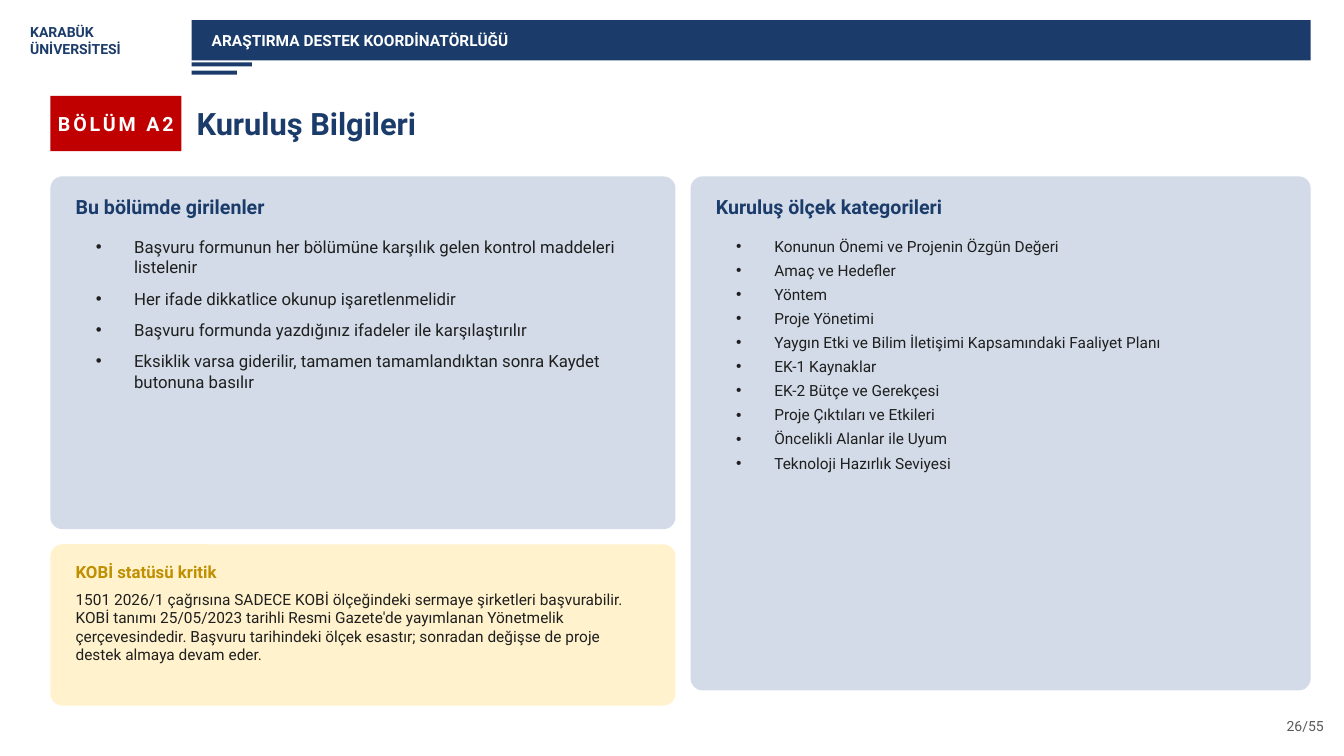
import pptx
import pptx.util
import pptx.dml.color
import pptx.enum.shapes
import pptx.enum.text
import lxml.etree

NAVY, RED, PALE, CREAM = "1B3C6B", "C00000", "D2DBE7", "FFF2CC"
GOLD, INK, GRAY, WHITE = "BF8F00", "1F1F1F", "595959", "FFFFFF"
FONT = "Roboto"

SCHOOL = ["KARABÜK", "ÜNİVERSİTESİ"]
UNIT = "ARAŞTIRMA DESTEK KOORDİNATÖRLÜĞÜ"
BADGE = "BÖLÜM A2"
TITLE = "Kuruluş Bilgileri"
PAGE = "26/55"
CARDS = [
    dict(box=(50, 175, 620, 350), head="Bu bölümde girilenler", size=12, gap=8, items=[
        "Başvuru formunun her bölümüne karşılık gelen kontrol maddeleri listelenir",
        "Her ifade dikkatlice okunup işaretlenmelidir",
        "Başvuru formunda yazdığınız ifadeler ile karşılaştırılır",
        "Eksiklik varsa giderilir, tamamen tamamlandıktan sonra Kaydet butonuna basılır",
    ]),
    dict(box=(685, 175, 615, 510), head="Kuruluş ölçek kategorileri", size=11, gap=4, items=[
        "Konunun Önemi ve Projenin Özgün Değeri",
        "Amaç ve Hedefler",
        "Yöntem",
        "Proje Yönetimi",
        "Yaygın Etki ve Bilim İletişimi Kapsamındaki Faaliyet Planı",
        "EK-1 Kaynaklar",
        "EK-2 Bütçe ve Gerekçesi",
        "Proje Çıktıları ve Etkileri",
        "Öncelikli Alanlar ile Uyum",
        "Teknoloji Hazırlık Seviyesi",
    ]),
]
NOTE = dict(
    box=(50, 540, 620, 160), head="KOBİ statüsü kritik",
    text="1501 2026/1 çağrısına SADECE KOBİ ölçeğindeki sermaye şirketleri başvurabilir. "
         "KOBİ tanımı 25/05/2023 tarihli Resmi Gazete'de yayımlanan Yönetmelik çerçevesindedir. "
         "Başvuru tarihindeki ölçek esastır; sonradan değişse de proje destek almaya devam eder.")

KIND = pptx.enum.shapes.MSO_SHAPE
ALIGN = pptx.enum.text.PP_ALIGN
MID = pptx.enum.text.MSO_ANCHOR.MIDDLE
TOP = pptx.enum.text.MSO_ANCHOR.TOP


def px(n):
    return pptx.util.Emu(n * 9144)


def paint(hue):
    return pptx.dml.color.RGBColor.from_string(hue)


def block(box, hue, radius=0):
    kind = KIND.ROUNDED_RECTANGLE if radius else KIND.RECTANGLE
    shape = slide.shapes.add_shape(kind, *map(px, box))
    if radius:
        shape.adjustments[0] = radius / min(box[2:])
    shape.shadow.inherit = False
    shape.fill.solid()
    shape.fill.fore_color.rgb = paint(hue)
    shape.line.fill.background()
    return shape


def write(shape, lines, size, hue, bold=False, align=ALIGN.LEFT, anchor=MID, pad=(0, 0, 0, 0)):
    frame = shape.text_frame
    frame.text = "\n".join(lines)
    frame.word_wrap = True
    frame.auto_size = pptx.enum.text.MSO_AUTO_SIZE.NONE
    frame.vertical_anchor = anchor
    frame.margin_left, frame.margin_top, frame.margin_right, frame.margin_bottom = map(px, pad)
    for para in frame.paragraphs:
        para.alignment = align
        para.space_before = pptx.util.Pt(0)
        for run in para.runs:
            run.font.name = FONT
            run.font.size = pptx.util.Pt(size)
            run.font.bold = bold
            run.font.color.rgb = paint(hue)
    return frame


def label(box, lines, size, hue, **style):
    return write(slide.shapes.add_textbox(*map(px, box)), lines, size, hue, **style)


def place(shape, box):
    shape.left, shape.top, shape.width, shape.height = map(px, box)
    slide.shapes._spTree.append(shape._element)


def bullet(para):
    props = para._p.get_or_add_pPr()
    props.set("marL", str(px(38)))
    props.set("indent", str(-px(38)))
    mark = lxml.etree.SubElement(props, pptx.oxml.ns.qn("a:buChar"))
    mark.set("char", "•")


def card(body, box, head, size, gap, items):
    left, top, wide, high = box
    block(box, PALE, 12)
    label((left + 25, top + 10, 570, 40), [head], 14, NAVY, bold=True)
    place(body, (left + 35, top + 55, 570, high - 60))
    frame = write(body, items, size, INK, anchor=TOP, pad=(10, 5, 10, 5))
    for para in frame.paragraphs:
        bullet(para)
        para.space_after = pptx.util.Pt(gap)
    para.space_after = pptx.util.Pt(0)


deck = pptx.Presentation()
deck.slide_width, deck.slide_height = px(1333), px(750)
slide = deck.slides.add_slide(deck.slide_layouts[3])
title, *bodies = slide.placeholders

label((30, 15, 150, 50), SCHOOL, 10, NAVY, bold=True)
write(block((190, 20, 1110, 40), NAVY), [UNIT], 11, WHITE, bold=True, pad=(20, 0, 0, 0))
for top, wide in ((62, 60), (70, 45)):
    block((190, top, wide, 4), NAVY)
label((1213, 705, 100, 30), [PAGE], 10, GRAY, align=ALIGN.RIGHT)

badge = write(block((50, 95, 130, 55), RED), [BADGE], 14, WHITE, bold=True, align=ALIGN.CENTER)
badge.paragraphs[0].runs[0]._r.get_or_add_rPr().set("spc", "200")
place(title, (195, 95, 1090, 55))
write(title, [TITLE], 22, NAVY, bold=True)

for body, data in zip(bodies, CARDS):
    card(body, **data)

left, top, wide, high = NOTE["box"]
block(NOTE["box"], CREAM, 12)
label((left + 25, top + 10, 570, 35), [NOTE["head"]], 12, GOLD, bold=True)
label((left + 25, top + 45, 570, 110), [NOTE["text"]], 11, INK, anchor=TOP)

deck.save("out.pptx")
